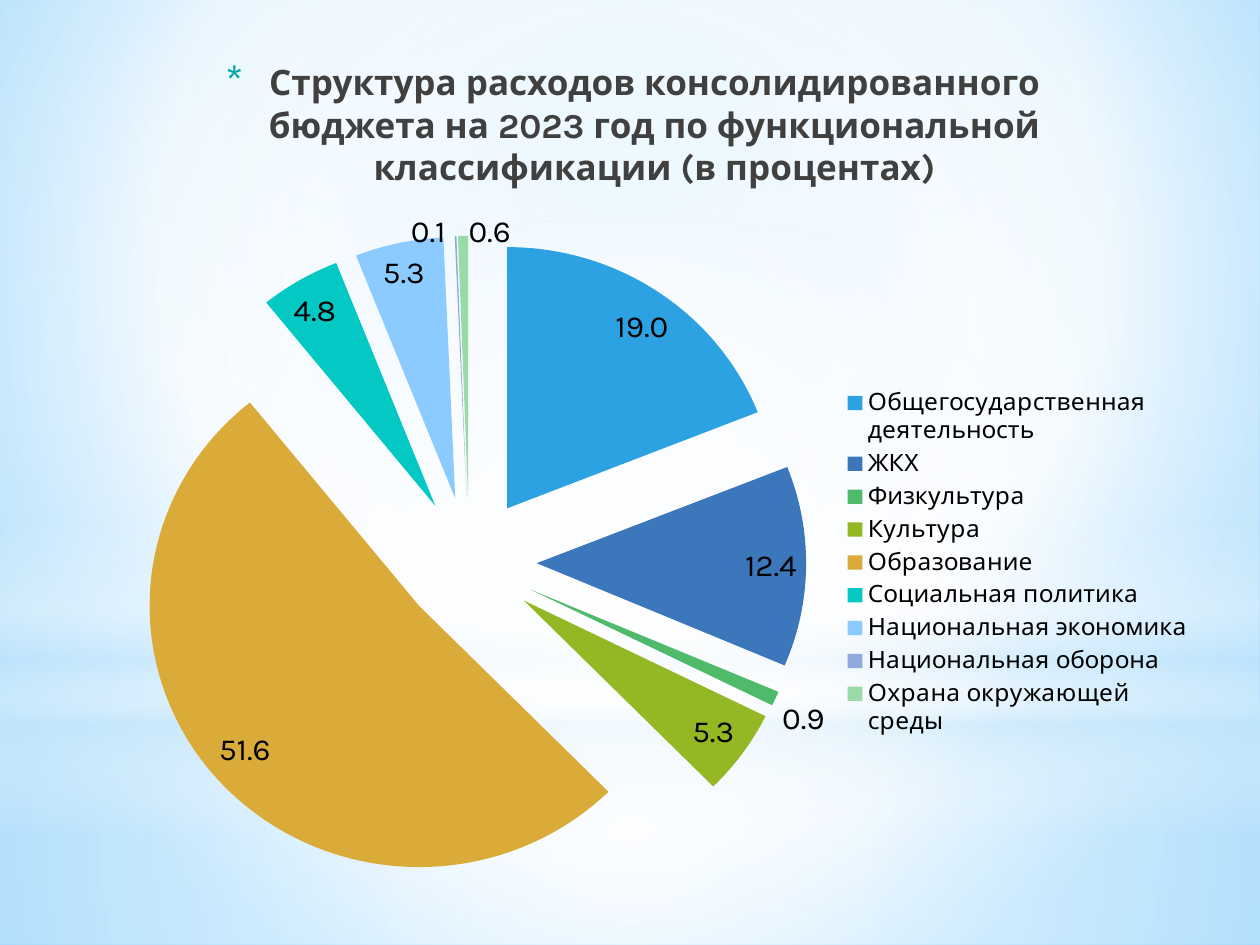
from lxml import etree
from pptx import Presentation
from pptx.chart.data import CategoryChartData
from pptx.dml.color import RGBColor
from pptx.enum.chart import XL_CHART_TYPE, XL_LABEL_POSITION, XL_LEGEND_POSITION
from pptx.enum.shapes import MSO_SHAPE
from pptx.enum.text import MSO_ANCHOR, PP_ALIGN
from pptx.oxml.ns import qn
from pptx.util import Pt

PIE = XL_CHART_TYPE.PIE_EXPLODED
BEST_FIT = XL_LABEL_POSITION.BEST_FIT
RIGHT = XL_LEGEND_POSITION.RIGHT
RECTANGLE, OVAL = MSO_SHAPE.RECTANGLE, MSO_SHAPE.OVAL
MIDDLE, CENTER = MSO_ANCHOR.MIDDLE, PP_ALIGN.CENTER

PX = 914400 / 126
FONT = "Karla"
WHITE = RGBColor(0xFF, 0xFF, 0xFF)
BLACK = RGBColor(0x00, 0x00, 0x00)
GRAY = RGBColor(0x40, 0x40, 0x40)
TEAL = RGBColor(0x04, 0xA8, 0xA4)
MIST = RGBColor(0xC6, 0xE7, 0xFC)
SKY = RGBColor(0xB0, 0xE0, 0xFF)
BLUE = RGBColor(0x6B, 0xC5, 0xFF)

TITLE = "Структура расходов консолидированного бюджета на 2023 год по функциональной классификации (в процентах)"
TITLE_BOX = (184, 45, 897, 158)
CHART_BOX = (64, 193, 1142, 717)
PLOT = {"x": 0.06, "y": 0.03, "w": 0.59, "h": 0.94}
EXPENSES = [
    ("Общегосударственная деятельность", 19.0, RGBColor(0x2C, 0xA2, 0xE3)),
    ("ЖКХ", 12.4, RGBColor(0x3C, 0x76, 0xBB)),
    ("Физкультура", 0.9, RGBColor(0x50, 0xBA, 0x6B)),
    ("Культура", 5.3, RGBColor(0x93, 0xB8, 0x24)),
    ("Образование", 51.6, RGBColor(0xDA, 0xAB, 0x39)),
    ("Социальная политика", 4.8, RGBColor(0x04, 0xC8, 0xC4)),
    ("Национальная экономика", 5.3, RGBColor(0x8B, 0xCB, 0xFF)),
    ("Национальная оборона", 0.1, RGBColor(0x8F, 0xA9, 0xDC)),
    ("Охрана окружающей среды", 0.6, RGBColor(0x98, 0xDB, 0xA6)),
]

CENTERED = (50, 50, 50, 50)
BACKGROUND_STOPS = [(0, SKY, 100), (60, WHITE, 100), (100, BLUE, 100)]
GLOWS = [
    (RECTANGLE, (0, 703, 1260, 242), [(0, WHITE, 91), (37, WHITE, 76), (100, MIST, 79)], CENTERED),
    (RECTANGLE, (0, 0, 1260, 703), [(0, WHITE, 89), (48, WHITE, 62), (100, MIST, 79)], CENTERED),
    (RECTANGLE, (0, 519, 1260, 315), [(0, WHITE, 0), (29, WHITE, 30), (45, MIST, 40),
                                      (55, WHITE, 26), (65, MIST, 60), (100, WHITE, 0)], None),
    (OVAL, (0, 220, 1260, 703), [(0, WHITE, 100), (56, WHITE, 0)], CENTERED),
]


def px(*lengths):
    return [round(length * PX) for length in lengths]


def add(parent, tag, **attributes):
    return etree.SubElement(parent, qn(tag), {key: str(value) for key, value in attributes.items()})


def set_gradient(properties, stops, focus):
    solid = properties.find(qn("a:solidFill"))
    gradient = etree.Element(qn("a:gradFill"), rotWithShape="1")
    stop_list = add(gradient, "a:gsLst")
    for position, color, opacity in stops:
        stop = add(stop_list, "a:gs", pos=position * 1000)
        add(add(stop, "a:srgbClr", val=color), "a:alpha", val=opacity * 1000)
    if focus:
        sides = {side: share * 1000 for side, share in zip("ltrb", focus)}
        add(add(gradient, "a:path", path="circle"), "a:fillToRect", **sides)
    else:
        add(gradient, "a:lin", ang=90 * 60000, scaled=0)
    properties.replace(solid, gradient)


def add_background(page):
    page.background.fill.solid()
    page.background.fill.fore_color.rgb = WHITE
    properties = page.element.find(".//" + qn("p:bgPr"))
    set_gradient(properties, BACKGROUND_STOPS, (20, 10, 20, 60))
    for kind, box, stops, focus in GLOWS:
        glow = page.shapes.add_shape(kind, *px(*box))
        glow.shadow.inherit = False
        glow.line.fill.background()
        glow.fill.solid()
        set_gradient(glow.element.spPr, stops, focus)


def add_title(page):
    frame = page.shapes.add_textbox(*px(*TITLE_BOX)).text_frame
    frame.word_wrap = True
    frame.vertical_anchor = MIDDLE
    para = frame.paragraphs[0]
    para.alignment = CENTER
    span = para.add_run()
    span.text = TITLE
    span.font.name = FONT
    span.font.size = Pt(20)
    span.font.bold = True
    span.font.color.rgb = GRAY
    indent = px(44)[0]
    properties = para._p.get_or_add_pPr()
    properties.set("marL", str(indent))
    properties.set("indent", str(-indent))
    add(add(properties, "a:buClr"), "a:srgbClr", val=TEAL)
    add(properties, "a:buSzPct", val=128000)
    add(properties, "a:buFont", typeface=FONT)
    add(properties, "a:buChar", char="*")


def add_pie(page):
    data = CategoryChartData(number_format="0.0")
    data.categories = [name for name, share, color in EXPENSES]
    data.add_series("Series 1", [share for name, share, color in EXPENSES])
    chart = page.shapes.add_chart(PIE, *px(*CHART_BOX), data).chart
    chart.has_title = False
    chart.font.name = FONT
    chart.font.size = Pt(18)
    chart.font.color.rgb = BLACK
    chart.has_legend = True
    chart.legend.position = RIGHT
    chart.legend.include_in_layout = False
    chart.legend.font.name = FONT
    chart.legend.font.size = Pt(14)
    chart.legend.font.color.rgb = BLACK

    plot = chart.plots[0]
    plot.vary_by_categories = True
    series = plot.series[0]
    for index, (name, share, color) in enumerate(EXPENSES):
        fill = series.points[index].format.fill
        fill.solid()
        fill.fore_color.rgb = color
    for explosion in series._element.iter(qn("c:explosion")):
        explosion.set("val", "25")
    labels = series.data_labels
    labels.show_value = True
    labels.number_format = "0.0"
    labels.number_format_is_linked = False
    labels.position = BEST_FIT
    labels.font.name = FONT
    labels.font.size = Pt(18)
    labels.font.color.rgb = BLACK

    area = chart._chartSpace.find(".//" + qn("c:plotArea"))
    for old in area.findall(qn("c:layout")):
        area.remove(old)
    layout = etree.Element(qn("c:layout"))
    area.insert(0, layout)
    manual = add(layout, "c:manualLayout")
    add(manual, "c:layoutTarget", val="inner")
    for axis in "xy":
        add(manual, f"c:{axis}Mode", val="edge")
    for side, share in PLOT.items():
        add(manual, f"c:{side}", val=share)


def main():
    deck = Presentation()
    deck.slide_width, deck.slide_height = px(1260, 945)
    page = deck.slides.add_slide(deck.slide_layouts[6])
    add_background(page)
    add_title(page)
    add_pie(page)
    deck.save("out.pptx")


if __name__ == "__main__":
    main()
